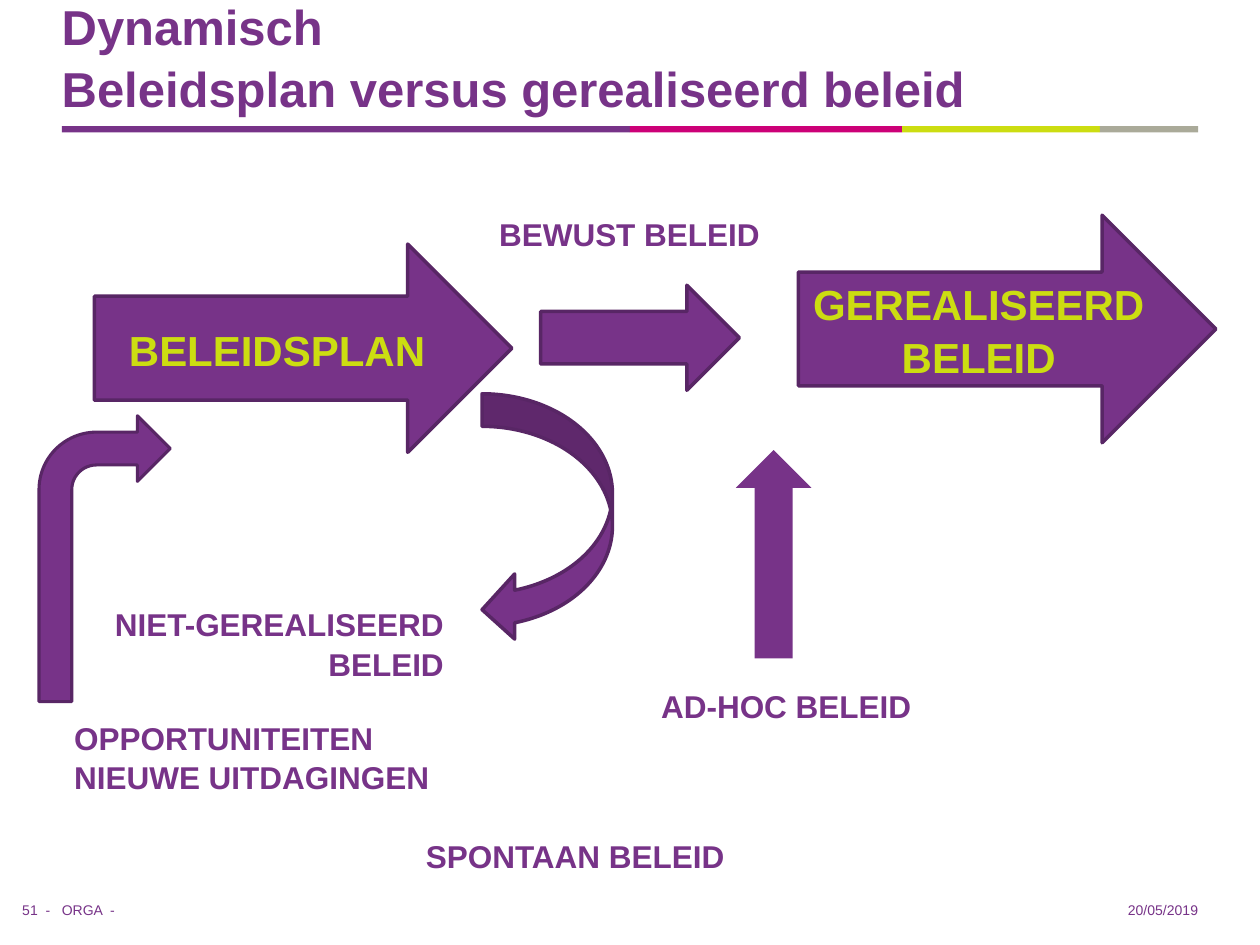
from pptx import Presentation
from pptx.dml.color import RGBColor
from pptx.enum.shapes import MSO_SHAPE
from pptx.enum.text import MSO_ANCHOR, PP_ALIGN
from pptx.util import Pt

RECT = MSO_SHAPE.RECTANGLE
RIGHT_ARROW = MSO_SHAPE.RIGHT_ARROW
CURVED_ARROW = MSO_SHAPE.CURVED_LEFT_ARROW
BENT_ARROW = MSO_SHAPE.BENT_ARROW
UP_ARROW = MSO_SHAPE.UP_ARROW
LEFT, CENTER, RIGHT = PP_ALIGN.LEFT, PP_ALIGN.CENTER, PP_ALIGN.RIGHT
TOP, MIDDLE, BOTTOM = MSO_ANCHOR.TOP, MSO_ANCHOR.MIDDLE, MSO_ANCHOR.BOTTOM

COLORS = {
    "purple": "773388",
    "dark": "582665",
    "pink": "CC0077",
    "lime": "CCDD11",
    "grey": "AAAA99",
}


class Deck:
    """Holds the style and the current slide; boxes are (left, top, width, height) in points."""

    font = "Arial"
    line_spacing = 1.05

    def __init__(self, width, height):
        self.prs = Presentation()
        self.prs.slide_width, self.prs.slide_height = Pt(width), Pt(height)
        self.slide = self.prs.slides.add_slide(self.prs.slide_layouts[6])

    def color(self, name):
        return RGBColor.from_string(COLORS[name])

    def set_text(self, tf, text, size, color, align, bold, spacing):
        tf.word_wrap = True
        tf.text = text
        for p in tf.paragraphs:
            p.alignment = align
            p.line_spacing = spacing
            p.font.name, p.font.size, p.font.bold = self.font, Pt(size), bold
            p.font.color.rgb = self.color(color)

    def shape(self, kind, box, fill="purple", line_width=0, text=""):
        s = self.slide.shapes.add_shape(kind, *map(Pt, box))
        s.shadow.inherit = False
        s.fill.solid()
        s.fill.fore_color.rgb = self.color(fill)
        if line_width:
            s.line.color.rgb = self.color("dark")
            s.line.width = Pt(line_width)
        else:
            s.line.fill.background()
        if text:
            s.text_frame.vertical_anchor = MIDDLE
            self.set_text(s.text_frame, text, 24, "lime", CENTER, True, self.line_spacing)

    def label(self, box, text, align=LEFT):
        tf = self.slide.shapes.add_textbox(*map(Pt, box)).text_frame
        tf.vertical_anchor = TOP
        self.set_text(tf, text, 18, "purple", align, True, self.line_spacing)

    def flush_text(self, box, text, size, align=LEFT, bold=False, spacing=1.0):
        """Text without margins that stands on the bottom of its box."""
        tf = self.slide.shapes.add_textbox(*map(Pt, box)).text_frame
        tf.margin_left = tf.margin_top = tf.margin_right = tf.margin_bottom = 0
        tf.vertical_anchor = BOTTOM
        self.set_text(tf, text, size, "purple", align, bold, spacing)


def main():
    deck = Deck(720, 540)

    left = 35.3
    for color, width in (("purple", 324.7), ("pink", 155.5), ("lime", 113), ("grey", 56.2)):
        deck.shape(RECT, (left, 72, width, 3.6), color)
        left += width

    deck.flush_text((35.3, 0, 579, 67), "Dynamisch\vBeleidsplan versus gerealiseerd beleid",
                    28, bold=True, spacing=deck.line_spacing)
    for x, width, text, align in ((0, 31, "51  - ", RIGHT),
                                  (35.3, 34, "ORGA  -", LEFT),
                                  (628.5, 56.2, "20/05/2019", RIGHT)):
        deck.flush_text((x, 515, width, 10), text, 8, align)

    deck.shape(RIGHT_ARROW, (54, 139.5, 238.5, 119), line_width=2, text="BELEIDSPLAN")
    deck.shape(RIGHT_ARROW, (456.3, 123, 238.5, 130), line_width=2, text="GEREALISEERD BELEID")
    deck.shape(CURVED_ARROW, (275.5, 225, 74.5, 142), line_width=2)
    deck.shape(RIGHT_ARROW, (309, 163, 113.5, 60), line_width=2)
    deck.shape(BENT_ARROW, (22.3, 237.6, 75, 163.4), line_width=1.75)
    deck.shape(UP_ARROW, (420.5, 257.2, 43.2, 119))

    deck.label((45.4, 341.3, 215.3, 51), "NIET-GEREALISEERD BELEID", RIGHT)
    deck.label((203.8, 118, 311.8, 29), "BEWUST BELEID", CENTER)
    deck.label((370.7, 388, 215.3, 29), "AD-HOC BELEID")
    deck.label((35.3, 406, 240.5, 51), "OPPORTUNITEITEN\nNIEUWE UITDAGINGEN")
    deck.label((172.8, 473.8, 311.8, 29), "SPONTAAN BELEID", CENTER)

    deck.prs.save("out.pptx")


if __name__ == "__main__":
    main()
